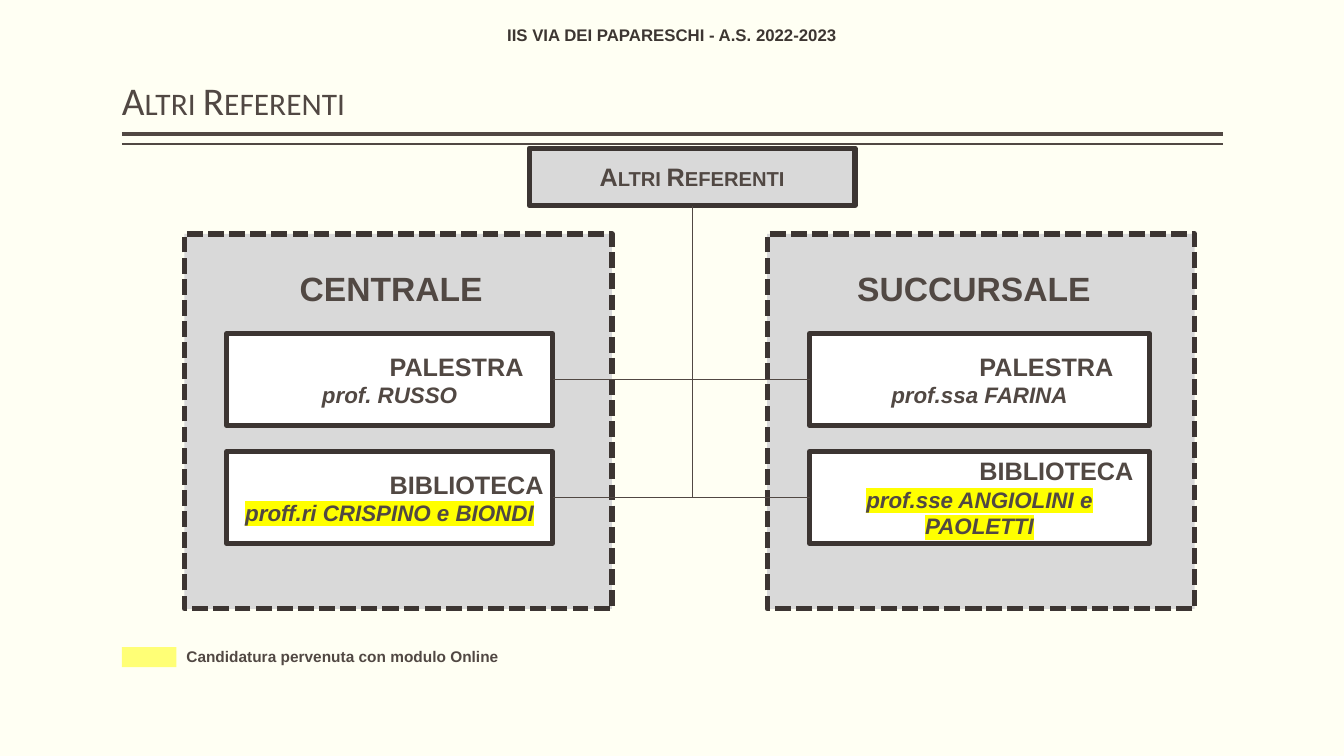
from dataclasses import dataclass

from lxml import etree
from pptx import Presentation
from pptx.dml.color import RGBColor
from pptx.enum.dml import MSO_LINE
from pptx.enum.shapes import MSO_CONNECTOR, MSO_SHAPE
from pptx.enum.text import MSO_ANCHOR, PP_ALIGN
from pptx.oxml.ns import qn
from pptx.util import Inches, Pt

RECT = MSO_SHAPE.RECTANGLE
STRAIGHT = MSO_CONNECTOR.STRAIGHT
DASH = MSO_LINE.SQUARE_DOT
TOP, MIDDLE, BOTTOM = MSO_ANCHOR.TOP, MSO_ANCHOR.MIDDLE, MSO_ANCHOR.BOTTOM
LEFT, CENTER = PP_ALIGN.LEFT, PP_ALIGN.CENTER
SIDE_LEFT, SIDE_DOWN, SIDE_RIGHT = 1, 2, 3
COLS, ROWS = 133.3, 75  # grid of square cells
CELL = 0.1  # inches


@dataclass(frozen=True)
class Theme:
    paper: str = "FFFFF3"
    ink: str = "514843"
    edge: str = "3C3532"
    head: str = "3D3632"
    panel: str = "D9D9D9"
    card: str = "FFFFFF"
    mark: str = "FFFF00"
    key: str = "FFFF76"
    sans: str = "Arial"
    display: str = "Calibri"
    title: int = 28
    site: int = 24
    role: int = 18
    name: int = 16
    top: int = 12
    note: int = 11
    frame: float = 3.78


THEME = Theme()


def rgb(code):
    return RGBColor.from_string(code)


def grid(*cells):
    return [Inches(cell * CELL) for cell in cells]


def part(box, x, y, w, h):
    """Box of w by h cells, offset from the corner of another box."""
    return box[0] + x, box[1] + y, w, h


def write(para, text, size, color=THEME.ink, face=THEME.sans, bold=True,
          italic=False, small=False, mark=None, align=CENTER):
    para.alignment = align
    font = para.font
    font.name, font.size, font.bold, font.italic = face, Pt(size), bold, italic
    font.color.rgb = rgb(color)
    if small:
        para._p.pPr.find(qn("a:defRPr")).set("cap", "small")
    run = para.add_run()
    run.text = text
    if mark:
        light = etree.SubElement(run._r.get_or_add_rPr(), qn("a:highlight"))
        etree.SubElement(light, qn("a:srgbClr")).set("val", mark)


def label(slide, box, text, size, anchor=TOP, inset=0.1, **style):
    frame = slide.shapes.add_textbox(*grid(*box)).text_frame
    frame.word_wrap = True
    frame.vertical_anchor = anchor
    frame.margin_left = frame.margin_right = Inches(inset)
    write(frame.paragraphs[0], text, size, **style)
    return frame


def block(slide, box, fill, edge=None, dash=None):
    shape = slide.shapes.add_shape(RECT, *grid(*box))
    shape.shadow.inherit = False
    shape.fill.solid()
    shape.fill.fore_color.rgb = rgb(fill)
    if edge:
        shape.line.color.rgb = rgb(edge)
        shape.line.width = Pt(THEME.frame)
        if dash:
            shape.line.dash_style = dash
    else:
        shape.line.fill.background()
    shape.text_frame.word_wrap = True
    shape.text_frame.vertical_anchor = MIDDLE
    return shape


def rule(slide, start, end, width):
    line = slide.shapes.add_connector(STRAIGHT, *grid(*start, *end))
    line.line.color.rgb = rgb(THEME.ink)
    line.line.width = Pt(width)
    etree.SubElement(line._element.spPr, qn("a:effectLst"))
    return line


def header(slide, box):
    x, y, w, h = box
    label(slide, (0, 1.5, COLS, 4), "IIS VIA DEI PAPARESCHI - A.S. 2022-2023",
          THEME.top, MIDDLE, 0, color=THEME.head)
    title = label(slide, box, "Altri Referenti", THEME.title, BOTTOM, 0,
                  face=THEME.display, bold=False, small=True, align=LEFT)
    title.paragraphs[0].line_spacing = 0.9
    # Double rule under the title
    for drop, width in ((0.5, 3), (1.5, 1)):
        rule(slide, (x, y + h + drop), (x + w, y + h + drop), width)


def root(slide, box):
    shape = block(slide, box, THEME.panel, THEME.edge)
    write(shape.text_frame.paragraphs[0], "Altri Referenti", THEME.role,
          small=True)
    return shape


def site(slide, box, name, width, staff):
    """Dashed panel with a heading and its cards; returns the cards."""
    block(slide, box, THEME.panel, THEME.edge, DASH)
    label(slide, part(box, 4.2, 2.9, 32.6, 5), name, THEME.site)
    cards = []
    for row, (role, who, mark) in enumerate(staff):
        spot = part(box, 4.2, 9.9 + 11.7 * row, width, 9.1)
        card = block(slide, spot, THEME.card, THEME.edge)
        frame = card.text_frame
        write(frame.paragraphs[0], role, THEME.role, small=True)
        write(frame.add_paragraph(), who, THEME.name, italic=True, mark=mark)
        cards.append(card)
    return cards


def links(slide, top, left, right):
    """Trunk below the top block, with a branch to each card."""
    unit = Inches(CELL)
    mid = (top.left + top.width / 2) / unit
    low = (left[-1].top + left[-1].height / 2) / unit
    trunk = rule(slide, (mid, (top.top + top.height) / unit), (mid, low), 0.5)
    trunk.begin_connect(top, SIDE_DOWN)
    for cards, side in ((left, SIDE_RIGHT), (right, SIDE_LEFT)):
        for card in cards:
            y = (card.top + card.height / 2) / unit
            rule(slide, (mid, y), (mid, y), 0.5).end_connect(card, side)


def legend(slide, box):
    block(slide, part(box, 0, 0.5, 5.4, 2), THEME.key)
    label(slide, part(box, 5.4, 0, box[2] - 5.4, box[3]),
          "Candidatura pervenuta con modulo Online", THEME.note, align=LEFT)


def main():
    deck = Presentation()
    deck.slide_width, deck.slide_height = grid(COLS, ROWS)
    slide = deck.slides.add_slide(deck.slide_layouts[6])
    slide.background.fill.solid()
    slide.background.fill.fore_color.rgb = rgb(THEME.paper)

    header(slide, (12.1, 0.8, 109.2, 12))
    left = site(slide, (18.3, 23.2, 42.4, 37.2), "CENTRALE", 32.3, [
        ("PALESTRA", "prof. RUSSO", None),
        ("BIBLIOTECA", "proff.ri CRISPINO e BIONDI", THEME.mark)])
    right = site(slide, (76.1, 23.2, 42.4, 37.2), "SUCCURSALE", 33.7, [
        ("PALESTRA", "prof.ssa FARINA", None),
        ("BIBLIOTECA", "prof.sse ANGIOLINI e PAOLETTI", THEME.mark)])
    top = root(slide, (52.5, 14.7, 32.3, 5.7))
    links(slide, top, left, right)
    legend(slide, (12.1, 63.7, 39.6, 2.9))
    deck.save("out.pptx")


if __name__ == "__main__":
    main()
